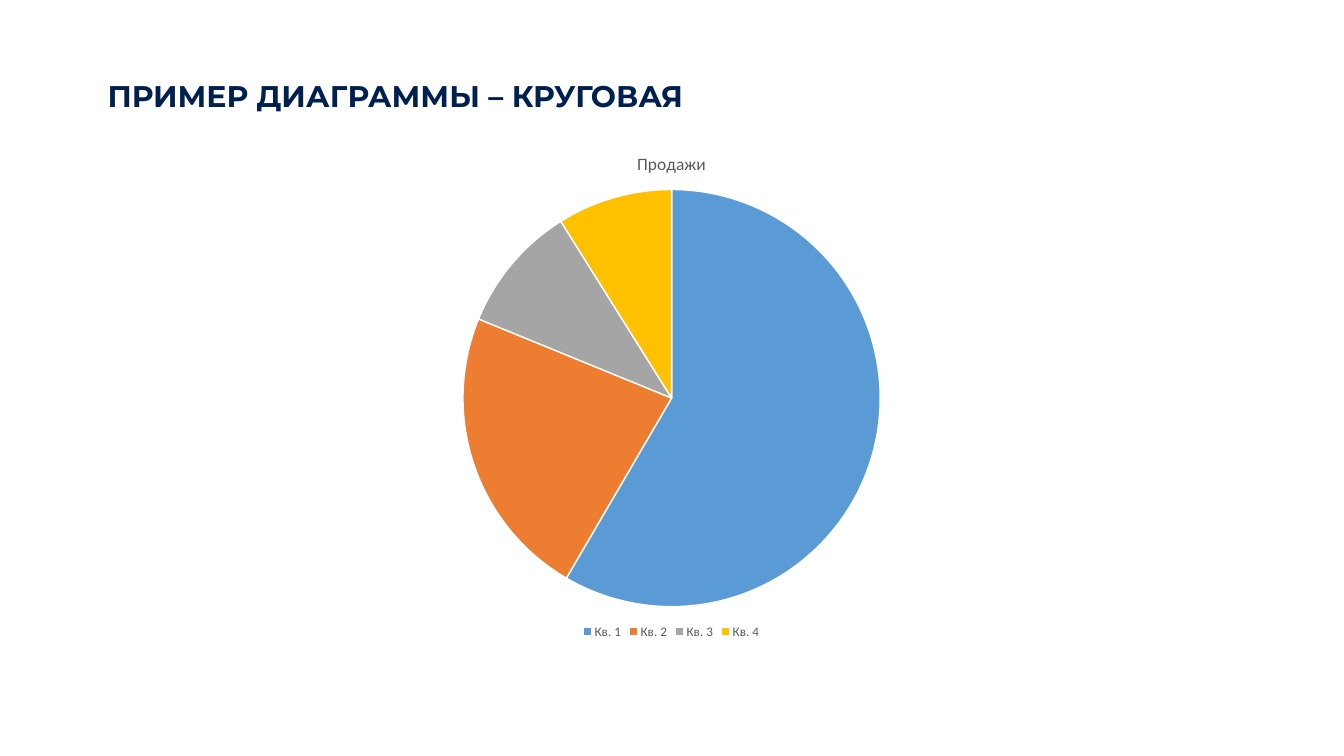
from pptx import Presentation
from pptx import util as u
from pptx.chart.data import CategoryChartData
from pptx.dml.color import RGBColor
from pptx.enum import chart as charts, text

NAVY, GREY, WHITE = "00204F", "595959", "FFFFFF"
QUARTERS = [
    ("Кв. 1", 59, "5B9BD5"),
    ("Кв. 2", 23, "ED7D31"),
    ("Кв. 3", 10, "A5A5A5"),
    ("Кв. 4", 9, "FFC000"),
]


def color(value):
    """Turn a hex string into a colour."""
    return RGBColor.from_string(value)


def style_font(font, name, size, value, bold=False):
    """Set the typeface, size, colour and weight of a font."""
    font.name, font.size, font.bold = name, u.Pt(size), bold
    font.color.rgb = color(value)


def set_title(page, wording):
    """Place and format the slide title."""
    title = page.shapes.title
    title.left, title.top = u.Cm(3.81), u.Cm(2.29)
    title.width, title.height = u.Cm(43.89), u.Cm(2.79)
    frame = title.text_frame
    frame.text = wording
    frame.word_wrap = True
    frame.auto_size = text.MSO_AUTO_SIZE.NONE
    frame.vertical_anchor = text.MSO_ANCHOR.MIDDLE
    para = frame.paragraphs[0]
    para.alignment = text.PP_ALIGN.LEFT
    para.line_spacing = 0.9
    style_font(para.font, "Montserrat", 32, NAVY, bold=True)


def add_pie(page, name, slices):
    """Add a pie chart with a heading, a legend and coloured slices."""
    labels, values, fills = zip(*slices)
    data = CategoryChartData()
    data.categories = labels
    data.add_series(name, values)
    chart = page.shapes.add_chart(
        charts.XL_CHART_TYPE.PIE,
        u.Cm(3.78), u.Cm(5.08), u.Cm(43.21), u.Cm(19.2), data,
    ).chart
    style_font(chart.font, "Calibri", 10, "000000")

    chart.has_title = True
    heading = chart.chart_title
    heading.include_in_layout = False
    heading.text_frame.text = name
    style_font(heading.text_frame.paragraphs[0].font, "Calibri", 18.6, GREY)

    chart.has_legend = True
    chart.legend.position = charts.XL_LEGEND_POSITION.BOTTOM
    chart.legend.include_in_layout = False
    style_font(chart.legend.font, "Calibri", 14, GREY)

    plot = chart.plots[0]
    plot.vary_by_categories = True
    for index, fill in enumerate(fills):
        look = plot.series[0].points[index].format
        look.fill.solid()
        look.fill.fore_color.rgb = color(fill)
        look.line.color.rgb = color(WHITE)
        look.line.width = u.Pt(1.5)


def main():
    """Build the slide and save the deck."""
    deck = Presentation()
    deck.slide_width, deck.slide_height = u.Cm(50.8), u.Cm(28.58)
    page = deck.slides.add_slide(deck.slide_layouts.get_by_name("Title Only"))
    page.background.fill.solid()
    page.background.fill.fore_color.rgb = color(WHITE)
    set_title(page, "ПРИМЕР ДИАГРАММЫ – КРУГОВАЯ")
    add_pie(page, "Продажи", QUARTERS)
    deck.save("out.pptx")


if __name__ == "__main__":
    main()
